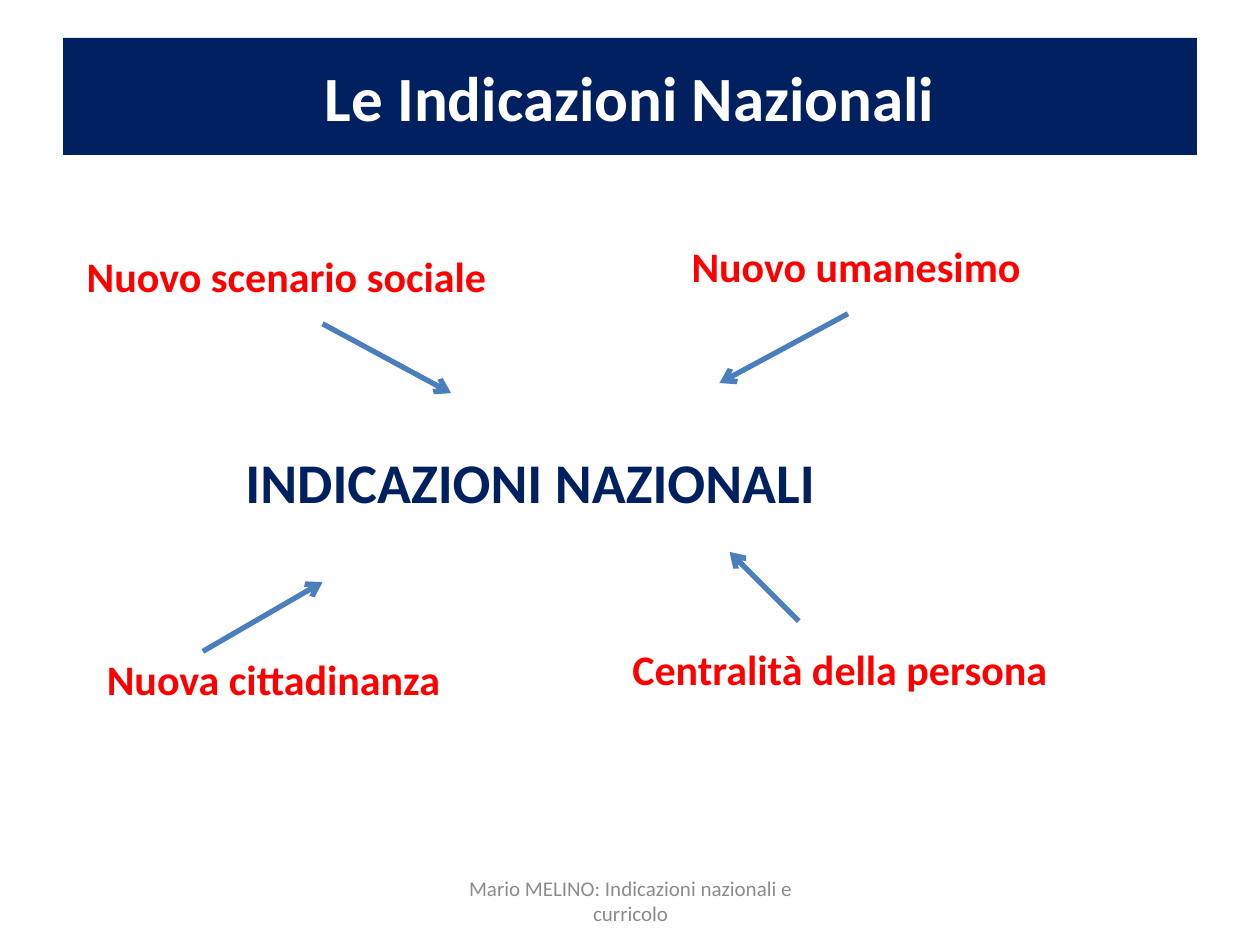
"""Build the slide on the themes around the Indicazioni Nazionali."""
from lxml import etree
from pptx import Presentation
from pptx.dml.color import RGBColor
from pptx.enum.shapes import MSO_CONNECTOR
from pptx.enum.text import MSO_ANCHOR, MSO_AUTO_SIZE, PP_ALIGN
from pptx.oxml.ns import qn
from pptx.util import Inches, Pt

STRAIGHT = MSO_CONNECTOR.STRAIGHT
MIDDLE, TOP = MSO_ANCHOR.MIDDLE, MSO_ANCHOR.TOP
CENTER, LEFT = PP_ALIGN.CENTER, PP_ALIGN.LEFT
NO_RESIZE = MSO_AUTO_SIZE.NONE

COLORS = {
    "navy": "002060",
    "white": "FFFFFF",
    "red": "FF0000",
    "blue": "4B7EBC",
    "gray": "8C8C8C",
}


def write(shape, text, size, color, bold=True, align=LEFT, anchor=TOP):
    frame = shape.text_frame
    frame.text = text
    frame.word_wrap = True
    frame.auto_size = NO_RESIZE
    frame.vertical_anchor = anchor
    paragraph = frame.paragraphs[0]
    paragraph.alignment = align
    font = paragraph.runs[0].font
    font.name, font.size, font.bold = "Calibri", Pt(size), bold
    font.color.rgb = RGBColor.from_string(COLORS[color])


prs = Presentation()
prs.slide_width, prs.slide_height = Inches(10), Inches(7.5)
slide = prs.slides.add_slide(prs.slide_layouts[5])

title = slide.shapes.title
title.left, title.top = Inches(0.5), Inches(0.3)
title.width, title.height = Inches(9), Inches(0.93)
title.fill.solid()
title.fill.fore_color.rgb = RGBColor.from_string(COLORS["navy"])
write(title, "Le Indicazioni Nazionali", 36, "white", align=CENTER, anchor=MIDDLE)

labels = [
    ("Nuovo scenario sociale", 0.59, 1.94, 3.94, 0.51, 24, "red"),
    ("Nuovo umanesimo", 5.39, 1.86, 3.78, 0.51, 24, "red"),
    ("Nuova cittadinanza", 0.75, 5.14, 3.46, 0.51, 24, "red"),
    ("Centralità della persona", 4.92, 5.06, 4.33, 0.51, 24, "red"),
    ("INDICAZIONI NAZIONALI", 1.85, 3.5, 6.14, 0.64, 32, "navy"),
]
for text, left, top, width, height, size, color in labels:
    label = slide.shapes.add_textbox(
        Inches(left), Inches(top), Inches(width), Inches(height))
    write(label, text, size, color)

arrows = [
    (2.56, 2.57, 3.58, 3.12),
    (6.73, 2.49, 5.71, 3.04),
    (1.61, 5.17, 2.56, 4.62),
    (6.34, 4.93, 5.79, 4.38),
]
for ends in arrows:
    arrow = slide.shapes.add_connector(STRAIGHT, *[Inches(end) for end in ends])
    arrow.line.width = Pt(3)
    arrow.line.color.rgb = RGBColor.from_string(COLORS["blue"])
    outline = arrow.line._get_or_add_ln()
    etree.SubElement(outline, qn("a:tailEnd"), type="arrow")
    etree.SubElement(arrow._element.spPr, qn("a:effectLst"))

footer = slide.shapes.add_textbox(
    Inches(3.42), Inches(6.95), Inches(3.17), Inches(0.4))
write(footer, "Mario MELINO: Indicazioni nazionali e curricolo", 12, "gray",
      bold=False, align=CENTER, anchor=MIDDLE)

prs.save("out.pptx")
